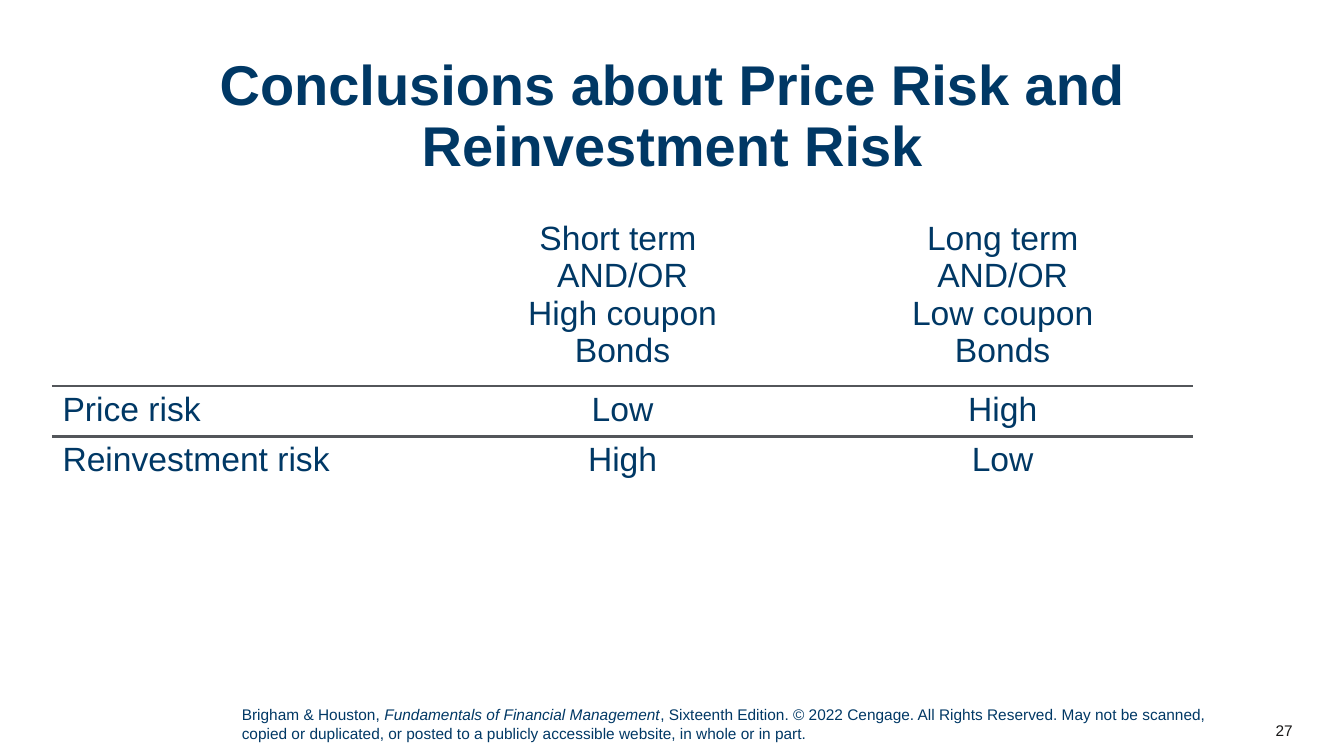
"""Build a slide that sums up price risk and reinvestment risk."""
from pptx import Presentation
from pptx.dml.color import RGBColor
from pptx.enum.text import MSO_ANCHOR, PP_ALIGN
from pptx.oxml import parse_xml
from pptx.oxml.ns import nsdecls
from pptx.util import Inches, Pt

HUES = {"navy": "003865", "ink": "181717", "rule": "53565A", "white": "FFFFFF"}
LEFT, COL = 0.52, 3.77
ROWS = [
    ["", "Short term \nAND/OR\nHigh coupon\nBonds", "Long term\nAND/OR\nLow coupon\nBonds"],
    ["Price risk", "Low", "High"],
    ["Reinvestment risk", "High", "Low"],
]
TALL = [1.59, 0.47, 0.47]


def style(frame, size, hue="navy", align=PP_ALIGN.LEFT, bold=False):
    for para in frame.paragraphs:
        para.alignment = align
        for font in [para.font] + [run.font for run in para.runs]:
            font.name, font.size, font.bold = "Arial", Pt(size), bold
            font.color.rgb = RGBColor.from_string(HUES[hue])


def add_box(left, top, width, height, text):
    box = slide.shapes.add_textbox(*map(Inches, (left, top, width, height)))
    box.text_frame.word_wrap = True
    box.text_frame.text = text
    return box.text_frame


deck = Presentation()
deck.slide_width, deck.slide_height = Inches(13.33), Inches(7.5)
slide = deck.slides.add_slide(deck.slide_layouts[6])

page = add_box(12.12, 7.05, 0.8, 0.4, "27")
page.vertical_anchor = MSO_ANCHOR.MIDDLE
style(page, 11, "ink", PP_ALIGN.RIGHT)

foot = add_box(2.3, 6.95, 9.8, 0.47, "Brigham & Houston, ")
for part in (
    "Fundamentals of Financial Management",
    ", Sixteenth Edition. © 2022 Cengage. All Rights Reserved. May not be scanned, "
    "copied or duplicated, or posted to a publicly accessible website, in whole or in part.",
):
    foot.paragraphs[0].add_run().text = part
style(foot, 11)
foot.paragraphs[0].runs[1].font.italic = True

title = add_box(LEFT, 0.52, 12.29, 1.33, "Conclusions about Price Risk and Reinvestment Risk")
title.paragraphs[0].line_spacing = 0.9
style(title, 40, align=PP_ALIGN.CENTER, bold=True)

table = slide.shapes.add_table(
    3, 3, Inches(LEFT), Inches(2.13), Inches(3 * COL), Inches(sum(TALL))
).table
table.first_row = table.horz_banding = False
for col in table.columns:
    col.width = Inches(COL)
for r, texts in enumerate(ROWS):
    table.rows[r].height = Inches(TALL[r])
    for c, text in enumerate(texts):
        cell = table.cell(r, c)
        cell.text_frame.text = text
        style(cell.text_frame, 24, align=PP_ALIGN.CENTER if c else PP_ALIGN.LEFT)
        cell.fill.solid()
        cell.fill.fore_color.rgb = RGBColor.from_string(HUES["white"])
        if r < 2:
            side = "lnT" if r else "lnB"
            line = parse_xml(
                f'<a:{side} {nsdecls("a")} w="{Pt(2.25)}"><a:solidFill>'
                f'<a:srgbClr val="{HUES["rule"]}"/></a:solidFill></a:{side}>'
            )
            cell._tc.get_or_add_tcPr().insert(0, line)

deck.save("out.pptx")
